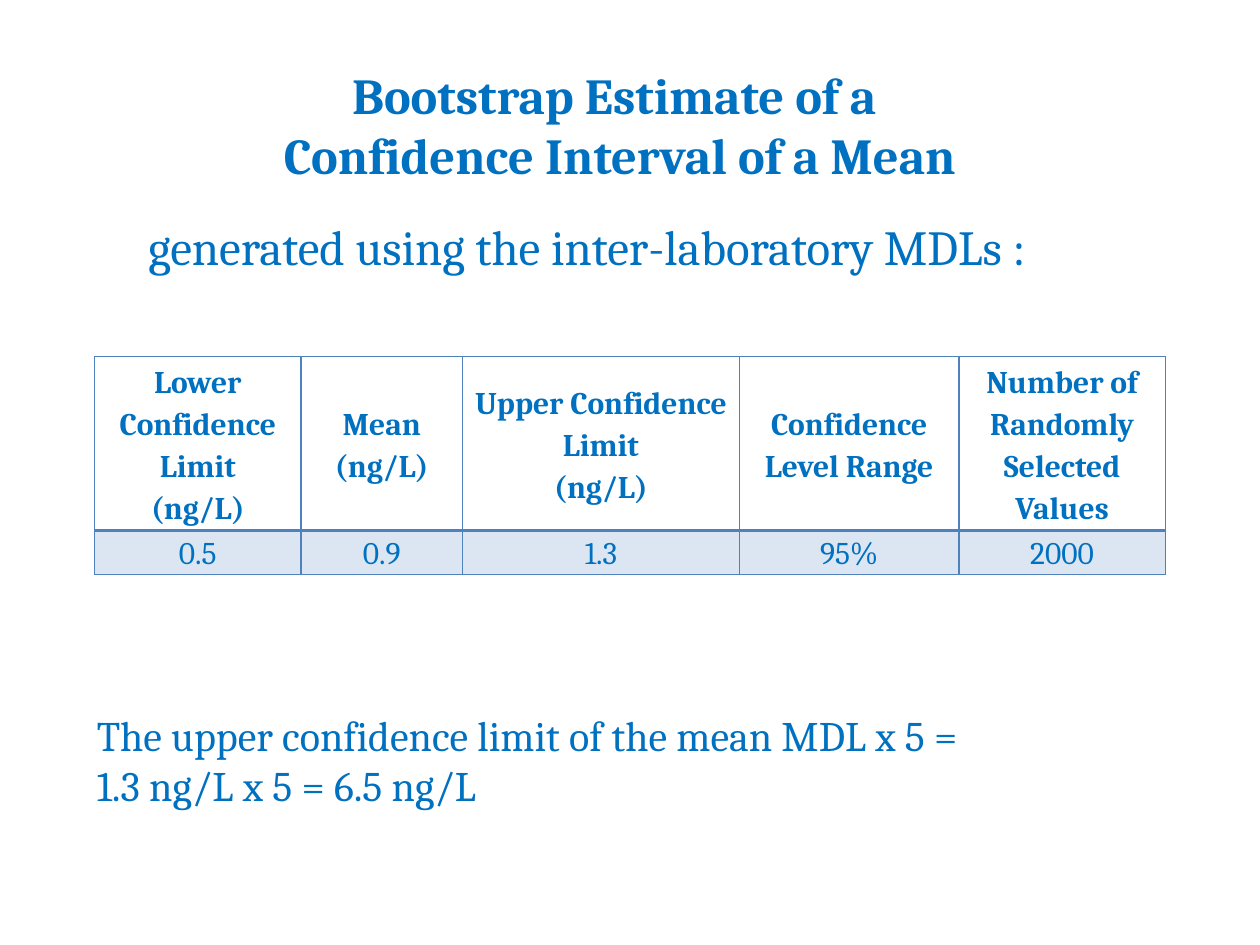
from pptx import Presentation, util as u
from pptx.dml.color import RGBColor
from pptx.enum import text
from pptx.oxml import parse_xml
from pptx.oxml.ns import nsdecls

COLORS = {"text": "0070C0", "border": "4F81BD", "band": "DCE6F2"}
CELL = u.Inches(0.1)
HEADERS = [
    ["Lower Confidence Limit", "(ng/L)"],
    ["Mean", "(ng/L)"],
    ["Upper Confidence Limit", "(ng/L)"],
    ["Confidence Level Range"],
    ["Number of Randomly Selected Values"],
]
VALUES = [["0.5"], ["0.9"], ["1.3"], ["95%"], ["2000"]]


class Deck:
    """Builds slides on a grid of 100 columns by 75 rows in one text style."""

    def __init__(self):
        self.prs = Presentation()
        self.prs.slide_width, self.prs.slide_height = 100 * CELL, 75 * CELL
        self.s = self.prs.slides.add_slide(self.prs.slide_layouts[5])

    def box(self, *cells):
        return [round(c * CELL) for c in cells]

    def fill_text(self, tf, lines, size, bold=False, **layout):
        tf.text = "\n".join(lines)
        for p in tf.paragraphs:
            for name, value in layout.items():
                setattr(p, name, value)
            fmt = {"name": "Cambria", "size": u.Pt(size), "bold": bold}
            for r in p.runs:
                for name, value in fmt.items():
                    setattr(r.font, name, value)
                r.font.color.rgb = RGBColor.from_string(COLORS["text"])

    def title(self, lines, size, *cells):
        sp = self.s.shapes.title
        sp.left, sp.top, sp.width, sp.height = self.box(*cells)
        fmt = {"vertical_anchor": text.MSO_ANCHOR.MIDDLE, "word_wrap": True,
               "auto_size": text.MSO_AUTO_SIZE.NONE, "margin_bottom": u.Inches(0.36)}
        for name, value in fmt.items():
            setattr(sp.text_frame, name, value)
        self.fill_text(sp.text_frame, lines, size, True, alignment=text.PP_ALIGN.CENTER)

    def text(self, lines, size, *cells):
        tf = self.s.shapes.add_textbox(*self.box(*cells)).text_frame
        tf.word_wrap = True
        self.fill_text(tf, lines, size)

    def border(self, cell, bottom):
        for side in "LRTB":
            width = u.Pt(bottom if side == "B" else 1)
            cell._tc.get_or_add_tcPr().append(parse_xml(
                f'<a:ln{side} {nsdecls("a")} w="{width}"><a:solidFill>'
                f'<a:srgbClr val="{COLORS["border"]}"/></a:solidFill></a:ln{side}>'))

    def table(self, rows, widths, heights, left, top):
        area = self.box(left, top, sum(widths), sum(heights))
        table = self.s.shapes.add_table(len(rows), len(widths), *area).table
        for col, width in zip(table.columns, self.box(*widths)):
            col.width = width
        for i, (row, height) in enumerate(zip(table.rows, self.box(*heights))):
            row.height = height
            header = i == 0
            fmt = {"vertical_anchor": text.MSO_ANCHOR.MIDDLE if header else text.MSO_ANCHOR.TOP,
                   "margin_left": u.Inches(0.07), "margin_right": u.Inches(0.07),
                   "margin_top": 0, "margin_bottom": 0}
            for cell, lines in zip(row.cells, rows[i]):
                for name, value in fmt.items():
                    setattr(cell, name, value)
                self.fill_text(cell.text_frame, lines, 18, header,
                               alignment=text.PP_ALIGN.CENTER, line_spacing=1.15)
                self.border(cell, 2 if header else 1)
                if header:
                    cell.fill.background()
                else:
                    cell.fill.solid()
                    cell.fill.fore_color.rgb = RGBColor.from_string(COLORS["band"])


def main():
    deck = Deck()
    deck.title(["Bootstrap Estimate of a ", "Confidence Interval of a Mean"],
               28.8, 4.2, 5, 90, 12.8)
    deck.text(["generated using the inter-laboratory MDLs :"], 28, 10.8, 16.7, 75.8, 5.7)
    deck.table([HEADERS, VALUES], [16.4, 12.8, 22, 17.4, 16.4], [13.8, 3.5], 7.5, 28.3)
    deck.text(["The upper confidence limit of the mean MDL x 5 =", "1.3 ng/L x 5 = 6.5 ng/L"],
              24, 6.7, 55.8, 86.7, 9.1)
    deck.prs.save("out.pptx")


if __name__ == "__main__":
    main()
